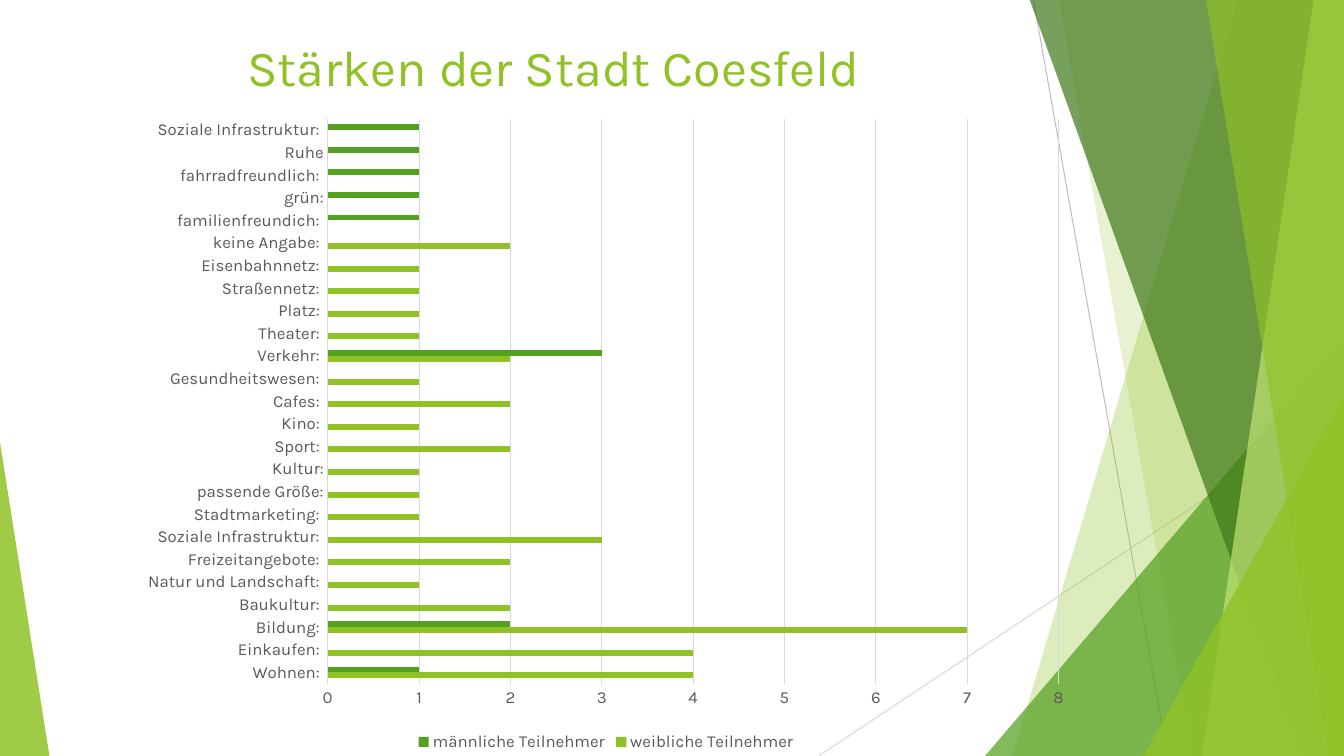
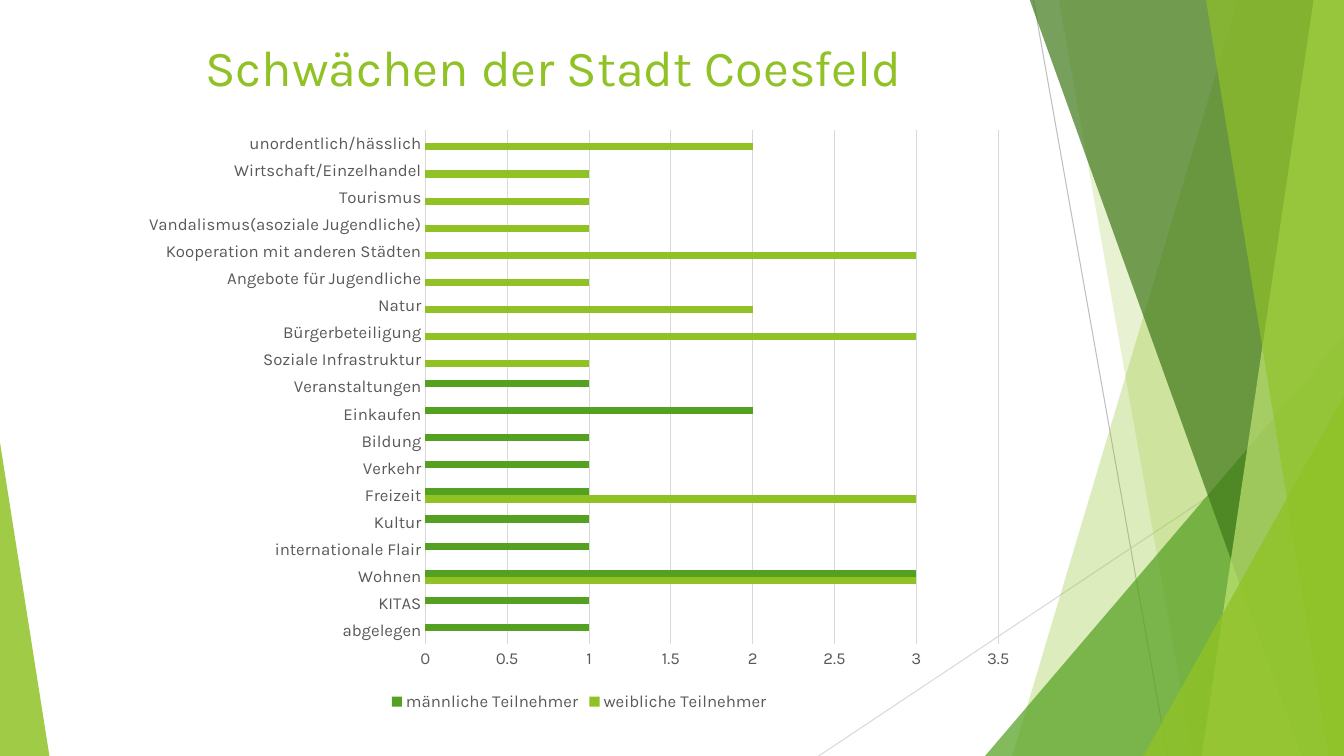
from dataclasses import dataclass

from pptx import Presentation
from pptx.chart.data import CategoryChartData
from pptx.dml.color import RGBColor
from pptx.enum.chart import XL_CHART_TYPE, XL_LEGEND_POSITION, XL_TICK_MARK
from pptx.enum.shapes import MSO_CONNECTOR, MSO_SHAPE
from pptx.enum.text import MSO_ANCHOR, PP_ALIGN
from pptx.oxml.ns import qn
from pptx.oxml.xmlchemy import OxmlElement
from pptx.util import Inches, Pt

BARS = XL_CHART_TYPE.BAR_CLUSTERED
BOTTOM = XL_LEGEND_POSITION.BOTTOM
NO_TICK = XL_TICK_MARK.NONE
STRAIGHT = MSO_CONNECTOR.STRAIGHT
TRIANGLE = MSO_SHAPE.ISOSCELES_TRIANGLE
MIDDLE = MSO_ANCHOR.MIDDLE
CENTER = PP_ALIGN.CENTER


@dataclass(frozen=True)
class Theme:
    font: str = "Karla"
    lime: str = "90C226"
    green: str = "54A021"
    dark: str = "3F7819"
    pale: str = "C0E474"
    grid: str = "D9D9D9"
    rule: str = "BFBFBF"
    text: str = "595959"
    head: int = 36
    label: int = 12
    thin: float = 0.75


THEME = Theme()
WIDE, HIGH = 13.33, 7.5
TOP = -0.01

RULES = [
    ((10.25, 0), (11.58, HIGH), THEME.rule),
    ((WIDE, 4.03), (8.12, HIGH), THEME.grid),
]
BACK = [
    ("band", (12.28, 10.04), THEME.lime, 30),
    ("band", (10.5, 11.83), THEME.lime, 20),
    ("peak", (9.77, 3.33, 3.56, 1), THEME.green, 72),
    ("band", (10.21, 12.91), THEME.dark, 70),
    ("band", (13.03, 11.92), THEME.pale, 70),
    ("band", (11.96, 13.18), THEME.lime, 65),
    ("peak", (11.34, 3.93, 1.99, 1), THEME.lime, 80),
    ("peak", (0, 4.39, 0.49, 0), THEME.lime, 85),
]

SERIES = [
    ("weibliche Teilnehmer", THEME.lime),
    ("männliche Teilnehmer", THEME.green),
]
GOOD = [
    ("Wohnen: ", 4, 1),
    ("Einkaufen: ", 4, None),
    ("Bildung: ", 7, 2),
    ("Baukultur: ", 2, None),
    ("Natur und Landschaft: ", 1, None),
    ("Freizeitangebote: ", 2, None),
    ("Soziale Infrastruktur: ", 3, None),
    ("Stadtmarketing: ", 1, None),
    ("passende Größe:", 1, None),
    ("Kultur:", 1, None),
    ("Sport: ", 2, None),
    ("Kino: ", 1, None),
    ("Cafes: ", 2, None),
    ("Gesundheitswesen: ", 1, None),
    ("Verkehr: ", 2, 3),
    ("Theater: ", 1, None),
    ("Platz: ", 1, None),
    ("Straßennetz: ", 1, None),
    ("Eisenbahnnetz: ", 1, None),
    ("keine Angabe: ", 2, None),
    ("familienfreundich: ", None, 1),
    ("grün:", None, 1),
    ("fahrradfreundlich: ", None, 1),
    ("Ruhe", None, 1),
    ("Soziale Infrastruktur: ", None, 1),
]
BAD = [
    ("abgelegen", 0, 1),
    ("KITAS", 0, 1),
    ("Wohnen", 3, 3),
    ("internationale Flair", 0, 1),
    ("Kultur", None, 1),
    ("Freizeit", 3, 1),
    ("Verkehr", None, 1),
    ("Bildung", None, 1),
    ("Einkaufen", None, 2),
    ("Veranstaltungen", None, 1),
    ("Soziale Infrastruktur", 1, None),
    ("Bürgerbeteiligung", 3, None),
    ("Natur", 2, None),
    ("Angebote für Jugendliche", 1, None),
    ("Kooperation mit anderen Städten", 3, None),
    ("Vandalismus(asoziale Jugendliche)", 1, None),
    ("Tourismus", 1, None),
    ("Wirtschaft/Einzelhandel", 1, None),
    ("unordentlich/hässlich", 2, None),
]
PAGES = [
    ("Stärken der Stadt Coesfeld", GOOD, (1.28, 1.05, 9.46, 6.45), 8, 1),
    ("Schwächen der Stadt Coesfeld", BAD, (1.3, 1.17, 8.89, 5.93), 3.5, 0.5),
]


def color(code):
    return RGBColor.from_string(code)


def inches(*sizes):
    return [Inches(size) for size in sizes]


def set_font(font, size, code):
    font.name = THEME.font
    font.size = Pt(size)
    font.color.rgb = color(code)


def set_line(line, code):
    line.color.rgb = color(code)
    line.width = Pt(THEME.thin)


def set_fill(shape, code, alpha):
    shape.shadow.inherit = False
    shape.line.fill.background()
    shape.fill.solid()
    shape.fill.fore_color.rgb = color(code)
    tint = OxmlElement("a:alpha")
    tint.set("val", str(alpha * 1000))
    shape.element.spPr.find(qn("a:solidFill"))[0].append(tint)


def add_rule(slide, start, end, code):
    rule = slide.shapes.add_connector(STRAIGHT, *inches(*start, *end))
    set_line(rule.line, code)
    rule.element.spPr.append(OxmlElement("a:effectLst"))


def add_band(slide, top, base):
    form = slide.shapes.build_freeform(*inches(top, TOP))
    corners = [(WIDE, TOP), (WIDE, HIGH), (base, HIGH)]
    form.add_line_segments([inches(*corner) for corner in corners])
    return form.convert_to_shape()


def add_peak(slide, left, top, width, tip):
    box = inches(left, top, width, HIGH - top)
    peak = slide.shapes.add_shape(TRIANGLE, *box)
    peak.adjustments[0] = tip
    return peak


def add_back(slide):
    for start, end, code in RULES:
        add_rule(slide, start, end, code)
    makers = {"band": add_band, "peak": add_peak}
    for kind, place, code, alpha in BACK:
        set_fill(makers[kind](slide, *place), code, alpha)


def add_title(slide, text):
    frame = slide.shapes.add_textbox(*inches(0.79, 0.27, 9.4, 0.78)).text_frame
    frame.word_wrap = True
    frame.vertical_anchor = MIDDLE
    title = frame.paragraphs[0]
    title.text = text
    title.alignment = CENTER
    set_font(title.font, THEME.head, THEME.lime)


def set_axes(chart, limit, step):
    for axis in (chart.category_axis, chart.value_axis):
        axis.major_tick_mark = axis.minor_tick_mark = NO_TICK
        set_font(axis.tick_labels.font, THEME.label, THEME.text)
    set_line(chart.category_axis.format.line, THEME.grid)
    scale = chart.value_axis
    scale.minimum_scale = 0
    scale.maximum_scale = limit
    scale.major_unit = step
    scale.format.line.fill.background()
    set_line(scale.major_gridlines.format.line, THEME.grid)


def add_bars(slide, rows, box, limit, step):
    labels, *columns = zip(*rows)
    data = CategoryChartData()
    data.categories = labels
    for (name, _), values in zip(SERIES, columns):
        data.add_series(name, values)
    chart = slide.shapes.add_chart(BARS, *inches(*box), data).chart
    set_font(chart.font, THEME.label, THEME.text)
    chart.has_title = False
    chart.has_legend = True
    chart.legend.position = BOTTOM
    chart.legend.include_in_layout = False
    set_font(chart.legend.font, THEME.label, THEME.text)
    set_axes(chart, limit, step)
    plot = chart.plots[0]
    plot.gap_width = 182
    plot.vary_by_categories = False
    for series, (_, code) in zip(plot.series, SERIES):
        series.format.fill.solid()
        series.format.fill.fore_color.rgb = color(code)


def main():
    deck = Presentation()
    deck.slide_width, deck.slide_height = inches(WIDE, HIGH)
    for title, rows, box, limit, step in PAGES:
        slide = deck.slides.add_slide(deck.slide_layouts[6])
        add_back(slide)
        add_title(slide, title)
        add_bars(slide, rows, box, limit, step)
    deck.save("out.pptx")


if __name__ == "__main__":
    main()
